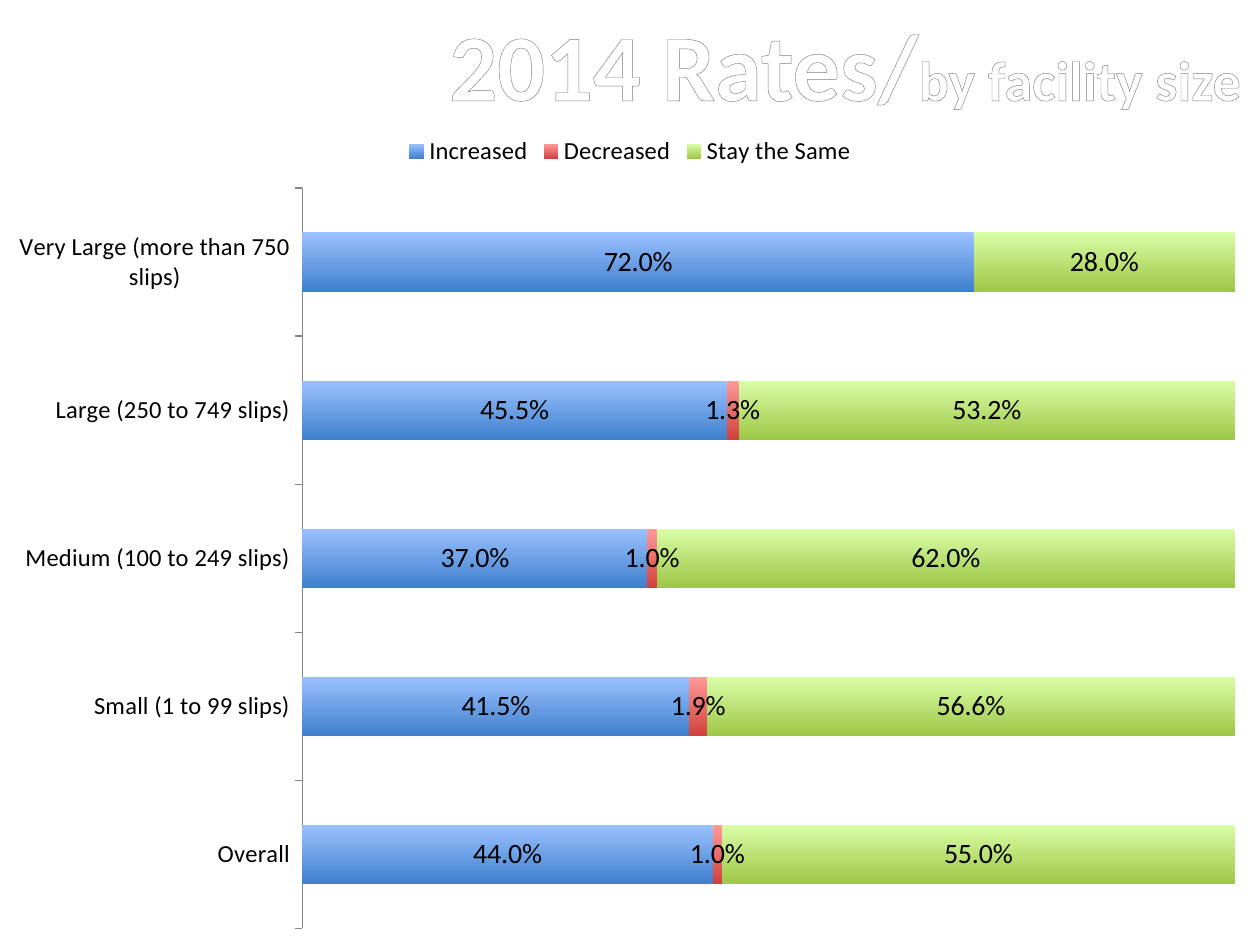
from lxml import etree
from pptx import Presentation
from pptx import util as u
from pptx.chart.data import CategoryChartData
from pptx.dml.color import RGBColor
from pptx.enum import chart as charts, text
from pptx.oxml import parse_xml
from pptx.oxml.ns import nsdecls, qn

FONT = "Calibri"
CATEGORIES = [
    "Overall",
    "Small (1 to 99 slips)",
    "Medium (100 to 249 slips)",
    "Large (250 to 749 slips)",
    "Very Large (more than 750 slips)",
]
SERIES = [
    ("Increased", [0.44, 0.415, 0.37, 0.455, 0.72], ("9BC1FF", "3F80CD")),
    ("Decreased", [0.01, 0.019, 0.01, 0.013, None], ("FF9A99", "D1403C")),
    ("Stay the Same", [0.55, 0.566, 0.62, 0.532, 0.28], ("DAFDA7", "9DC746")),
]
TITLE_STOPS = [(0, "FFFFFF"), (9, "FFFFFF"), (50, "7F7F7F"), (79, "FFFFFF"), (100, "FFFFFF")]


def color(value):
    return RGBColor.from_string(value)


def style_font(font, size, value="000000"):
    font.name = FONT
    font.size = u.Pt(size)
    font.color.rgb = color(value)


def outline_span(span):
    stops = "".join(
        f'<a:gs pos="{place * 1000}"><a:srgbClr val="{value}"/></a:gs>'
        for place, value in TITLE_STOPS
    )
    outline = parse_xml(
        f'<a:ln {nsdecls("a")} w="10541"><a:solidFill>'
        '<a:srgbClr val="7D7D7D"/></a:solidFill></a:ln>'
    )
    gradient = parse_xml(
        f'<a:gradFill {nsdecls("a")}><a:gsLst>{stops}</a:gsLst>'
        '<a:lin ang="5400000" scaled="0"/></a:gradFill>'
    )
    properties = span.font._element
    properties.insert(0, outline)
    properties.insert(1, gradient)


def add_heading(page, left, top, width, height):
    box = page.shapes.title
    box.left, box.top, box.width, box.height = left, top, width, height
    frame = box.text_frame
    frame.word_wrap = False
    frame.auto_size = text.MSO_AUTO_SIZE.SHAPE_TO_FIT_TEXT
    frame.vertical_anchor = text.MSO_ANCHOR.TOP
    para = frame.paragraphs[0]
    para.alignment = text.PP_ALIGN.CENTER
    for words, size in (("2014 Rates/", 54), ("by facility size", 32)):
        span = para.add_run()
        span.text = words
        span.font.name = FONT
        span.font.size = u.Pt(size)
        span.font.bold = True
        outline_span(span)


def place_plot(chart, **fractions):
    plot_area = chart._chartSpace.chart.plotArea
    for old in plot_area.findall(qn("c:layout")):
        plot_area.remove(old)
    layout = etree.Element(qn("c:layout"))
    manual = etree.SubElement(layout, qn("c:manualLayout"))
    settings = {"layoutTarget": "inner", "xMode": "edge", "yMode": "edge", **fractions}
    for name, value in settings.items():
        etree.SubElement(manual, qn(f"c:{name}"), val=str(value))
    plot_area.insert(0, layout)


def style_series(series, shades):
    fill = series.format.fill
    fill.gradient()
    fill.gradient_angle = 270
    for stop, shade in zip(fill.gradient_stops, shades):
        stop.color.rgb = color(shade)
    labels = series.data_labels
    labels.show_value = True
    labels.number_format = "0.0%"
    labels.number_format_is_linked = False
    style_font(labels.font, 16)


def add_rates_chart(page, left, top, width, height):
    data = CategoryChartData(number_format="0.0%")
    data.categories = CATEGORIES
    for name, values, _ in SERIES:
        data.add_series(name, values)
    chart = page.shapes.add_chart(
        charts.XL_CHART_TYPE.BAR_STACKED_100, left, top, width, height, data
    ).chart
    style_font(chart.font, 10)
    chart.has_title = False
    chart.has_legend = True
    chart.legend.position = charts.XL_LEGEND_POSITION.TOP
    chart.legend.include_in_layout = False
    style_font(chart.legend.font, 14)

    value_axis = chart.value_axis
    value_axis.visible = False
    value_axis.has_major_gridlines = False
    value_axis.tick_labels.number_format = "0.0%"
    value_axis.tick_labels.number_format_is_linked = False

    category_axis = chart.category_axis
    category_axis.major_tick_mark = charts.XL_TICK_MARK.OUTSIDE
    category_axis.format.line.color.rgb = color("868686")
    style_font(category_axis.tick_labels.font, 14)

    plot = chart.plots[0]
    plot.gap_width = 150
    plot.overlap = 100
    plot.vary_by_categories = False
    for series, (_, _, shades) in zip(plot.series, SERIES):
        style_series(series, shades)
    place_plot(chart, x=0.24, y=0.08, w=0.74, h=0.9)


def main():
    deck = Presentation()
    deck.slide_width, deck.slide_height = u.Inches(10), u.Inches(7.5)
    page = deck.slides.add_slide(deck.slide_layouts[5])
    add_heading(page, u.Inches(3.42), u.Inches(0), u.Inches(6.58), u.Inches(1.92))
    add_rates_chart(page, u.Inches(0), u.Inches(0.97), u.Inches(10), u.Inches(6.53))
    deck.save("out.pptx")


if __name__ == "__main__":
    main()
